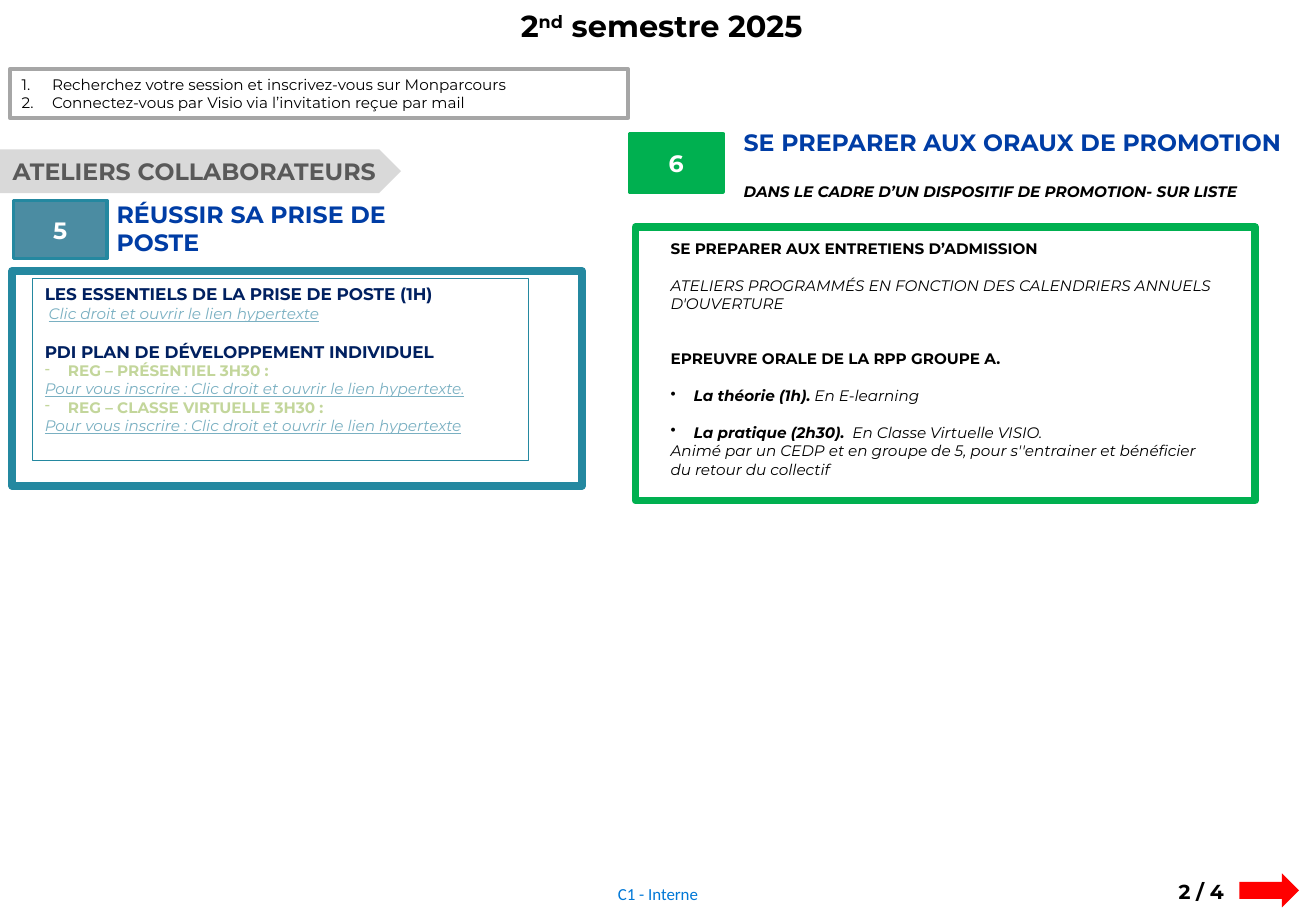
from lxml import etree
from pptx import Presentation
from pptx.dml.color import RGBColor
from pptx.enum import shapes, text
from pptx.oxml.ns import qn
from pptx.util import Inches, Pt

BLACK = RGBColor(0x00, 0x00, 0x00)
WHITE = RGBColor(0xFF, 0xFF, 0xFF)
RED = RGBColor(0xFF, 0x00, 0x00)
GREEN = RGBColor(0x00, 0xB0, 0x50)
TEAL = RGBColor(0x24, 0x88, 0xA0)
SOFT_TEAL = RGBColor(0x4B, 0x8C, 0xA2)
LINK = RGBColor(0x7A, 0xB0, 0xC2)
PALE_GREEN = RGBColor(0xC3, 0xD6, 0x9B)
BLUE = RGBColor(0x00, 0x3D, 0xA5)
NAVY = RGBColor(0x00, 0x20, 0x60)
FOOTER_BLUE = RGBColor(0x00, 0x78, 0xD7)
LIGHT_GREY = RGBColor(0xD9, 0xD9, 0xD9)
MID_GREY = RGBColor(0xA6, 0xA6, 0xA6)
DARK_GREY = RGBColor(0x59, 0x59, 0x59)

LEFT, CENTER = text.PP_ALIGN.LEFT, text.PP_ALIGN.CENTER
TOP, MIDDLE = text.MSO_ANCHOR.TOP, text.MSO_ANCHOR.MIDDLE
RECTANGLE = shapes.MSO_SHAPE.RECTANGLE
BLANK_LINE = 11


def set_frame(shape, anchor, inset):
    frame = shape.text_frame
    frame.word_wrap = True
    frame.vertical_anchor = anchor
    if inset is not None:
        frame.margin_left = frame.margin_right = Inches(inset)
        frame.margin_top = frame.margin_bottom = Inches(inset)


def add_box(slide, left, top, width, height, anchor=TOP, inset=None):
    box = slide.shapes.add_textbox(Inches(left), Inches(top), Inches(width), Inches(height))
    set_frame(box, anchor, inset)
    return box


def add_shape(slide, left, top, width, height, kind=RECTANGLE, fill=None,
              line=None, line_width=1, anchor=MIDDLE):
    shape = slide.shapes.add_shape(kind, Inches(left), Inches(top), Inches(width), Inches(height))
    shape.shadow.inherit = False
    if fill is None:
        shape.fill.background()
    else:
        shape.fill.solid()
        shape.fill.fore_color.rgb = fill
    if line is None:
        shape.line.fill.background()
    else:
        shape.line.color.rgb = line
        shape.line.width = Pt(line_width)
    set_frame(shape, anchor, None)
    return shape


def add_run(paragraph, content, size=9, color=BLACK, bold=False, italic=False,
            underline=False, font="Montserrat", superscript=False):
    run = paragraph.add_run()
    run.text = content
    run.font.name = font
    run.font.size = Pt(size)
    run.font.color.rgb = color
    run.font.bold = bold
    run.font.italic = italic
    run.font.underline = underline
    if superscript:
        run.font._element.set("baseline", "30000")


def set_marker(paragraph, marker, indent):
    """Give a hanging bullet, or automatic numbers when the marker is "1."."""
    properties = paragraph._p.get_or_add_pPr()
    properties.set("marL", str(Inches(indent)))
    properties.set("indent", str(-Inches(indent)))
    if marker == "1.":
        etree.SubElement(properties, qn("a:buAutoNum"), type="arabicPeriod")
    else:
        etree.SubElement(properties, qn("a:buChar"), char=marker)


def write(shape, content, align=LEFT, before=0, line_spacing=None, marker=None,
          indent=0.19, **font):
    """Add a paragraph to the shape, using its empty first one if there is one."""
    frame = shape.text_frame
    paragraph = frame.paragraphs[0]
    if paragraph.runs:
        paragraph = frame.add_paragraph()
    if marker:
        set_marker(paragraph, marker, indent)
    paragraph.alignment = align
    if before:
        paragraph.space_before = Pt(before)
    if line_spacing:
        paragraph.line_spacing = Pt(line_spacing)
    add_run(paragraph, content, **font)
    return paragraph


def add_badge(slide, left, top, number, fill, line):
    badge = add_shape(slide, left, top, 0.77, 0.48, fill=fill, line=line, line_width=2)
    write(badge, number, CENTER, size=14, color=WHITE, bold=True)


def add_header(slide):
    title = write(add_box(slide, 1.77, 0.01, 7.35, 0.4), "2", CENTER, size=18, bold=True)
    add_run(title, "nd", size=18, bold=True, superscript=True)
    add_run(title, " semestre 2025", size=18, bold=True)

    steps = add_shape(slide, 0.08, 0.57, 5.09, 0.4, line=MID_GREY, line_width=2.25)
    for step in ("Recherchez votre session et inscrivez-vous sur Monparcours",
                 "Connectez-vous par Visio via l’invitation reçue par mail"):
        write(steps, step, text.PP_ALIGN.JUSTIFY, marker="1.", indent=0.25)

    banner = add_shape(slide, -0.01, 1.23, 3.31, 0.36, shapes.MSO_SHAPE.PENTAGON, LIGHT_GREY)
    write(banner, "ATELIERS COLLABORATEURS", CENTER, size=14, color=DARK_GREY, bold=True)


def add_new_position(slide):
    heading = add_box(slide, 0.96, 1.64, 2.7, 0.57, inset=0)
    write(heading, "RÉUSSIR SA PRISE DE POSTE", line_spacing=17, size=14, color=BLUE, bold=True)
    add_shape(slide, 0.1, 2.23, 4.69, 1.77, line=TEAL, line_width=4.5)
    add_badge(slide, 0.11, 1.65, "5", SOFT_TEAL, TEAL)

    link = {"color": LINK, "italic": True, "underline": True}
    topic = {"size": 10, "color": NAVY, "bold": True}
    content = add_shape(slide, 0.27, 2.29, 4.08, 1.5, line=TEAL, line_width=0.75, anchor=TOP)
    write(content, "LES ESSENTIELS DE LA PRISE DE POSTE (1H)", **topic)
    essentials = write(content, " ", italic=True)
    add_run(essentials, "Clic droit et ouvrir le lien hypertexte", **link)
    write(content, "PDI PLAN DE DÉVELOPPEMENT INDIVIDUEL", before=BLANK_LINE, **topic)
    for session, ending in (("PRÉSENTIEL", "."), ("CLASSE VIRTUELLE", "")):
        write(content, f"REG – {session} 3H30 :", marker="-", color=PALE_GREEN, bold=True)
        write(content, f"Pour vous inscrire : Clic droit et ouvrir le lien hypertexte{ending}", **link)


def add_promotion(slide):
    heading = add_box(slide, 6.12, 1.05, 4.46, 0.7, inset=0)
    write(heading, "SE PREPARER AUX ORAUX DE PROMOTION", line_spacing=17,
          size=14, color=BLUE, bold=True)
    write(heading, "DANS LE CADRE D’UN DISPOSITIF DE PROMOTION- SUR LISTE",
          before=9, line_spacing=17, bold=True, italic=True)
    add_shape(slide, 5.23, 1.87, 5.1, 2.25, line=GREEN, line_width=4.5)
    add_badge(slide, 5.18, 1.1, "6", GREEN, GREEN)

    content = add_box(slide, 5.42, 1.92, 4.91, 2.07)
    write(content, "SE PREPARER AUX ENTRETIENS D’ADMISSION", bold=True)
    write(content, "ATELIERS PROGRAMMÉS EN FONCTION DES CALENDRIERS ANNUELS D'OUVERTURE",
          before=BLANK_LINE, italic=True)
    write(content, "EPREUVRE ORALE DE LA RPP GROUPE A.", before=2 * BLANK_LINE, bold=True)
    for part, place in (("La théorie (1h).", " En E-learning"),
                        ("La pratique (2h30).", "  En Classe Virtuelle VISIO.")):
        item = write(content, part, before=BLANK_LINE, marker="•", bold=True, italic=True)
        add_run(item, place, italic=True)
    for detail in ("Animé par un CEDP et en groupe de 5, pour s''entrainer et bénéficier",
                   "du retour du collectif"):
        write(content, detail, italic=True)


def add_footer(slide):
    label = add_box(slide, 4.93, 7.21, 0.97, 0.29, MIDDLE, inset=0)
    write(label, "C1 - Interne", CENTER, size=10, color=FOOTER_BLUE, font="Calibri")
    write(add_box(slide, 9.53, 7.19, 0.71, 0.3), "2 / 4", CENTER, size=12, bold=True)
    add_shape(slide, 10.2, 7.19, 0.49, 0.28, shapes.MSO_SHAPE.RIGHT_ARROW, RED)


def main():
    presentation = Presentation()
    presentation.slide_width = Inches(10.83)
    presentation.slide_height = Inches(7.5)
    slide = presentation.slides.add_slide(presentation.slide_layouts[6])
    add_header(slide)
    add_new_position(slide)
    add_promotion(slide)
    add_footer(slide)
    presentation.save("out.pptx")


if __name__ == "__main__":
    main()
